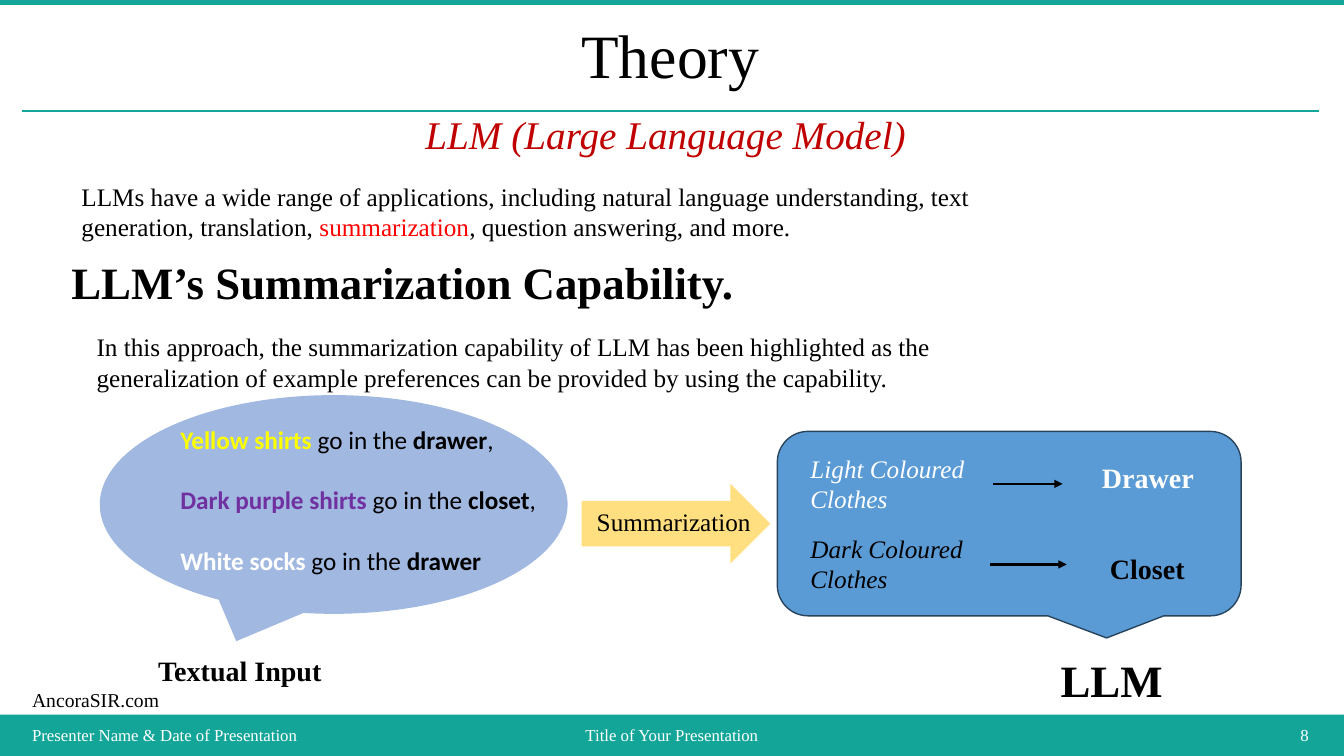
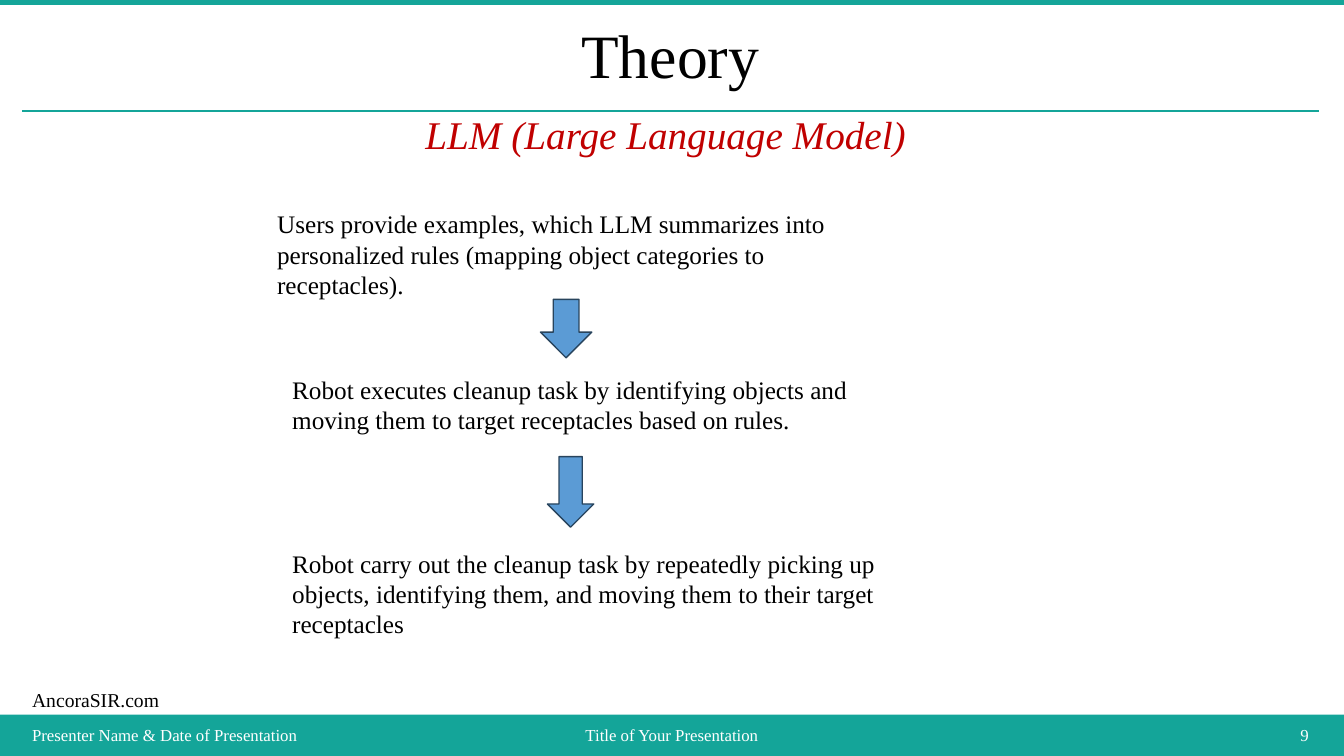
from lxml import etree
from pptx import Presentation
from pptx.dml.color import RGBColor
from pptx.enum import shapes, text
from pptx.oxml.ns import qn
from pptx.util import Inches, Pt

TEAL = RGBColor(0x14, 0xA5, 0x99)
WHITE = RGBColor(0xFF, 0xFF, 0xFF)
BLACK = RGBColor(0, 0, 0)
CRIMSON = RGBColor(0xC0, 0, 0)
RED = RGBColor(0xFF, 0, 0)
YELLOW = RGBColor(0xFF, 0xFF, 0)
PURPLE = RGBColor(0x70, 0x30, 0xA0)
BLUE = RGBColor(0x5B, 0x9B, 0xD5)
DARK_BLUE = RGBColor(0x28, 0x44, 0x5D)
INDIGO = RGBColor(0x44, 0x72, 0xC4)
GOLD = RGBColor(0xFF, 0xC0, 0)

SERIF = "Times New Roman"
SANS = "Calibri"
SHAPE = shapes.MSO_SHAPE
CENTER = text.PP_ALIGN.CENTER
RIGHT = text.PP_ALIGN.RIGHT
MIDDLE = text.MSO_ANCHOR.MIDDLE


class Deck:
    """The shared style and the slide being built."""

    def __init__(self):
        self.prs = Presentation()
        self.prs.slide_width = Inches(13.33)
        self.prs.slide_height = Inches(7.5)
        self.slide = None

    def start_slide(self, title, subtitle, number):
        self.slide = self.prs.slides.add_slide(self.prs.slide_layouts[6])
        background = self.slide.background.fill
        background.solid()
        background.fore_color.rgb = TEAL
        self.shape(SHAPE.RECTANGLE, (0, 0.05, 13.33, 7.04), WHITE)
        self.text((0.22, 6.78, 1.47, 0.34), "AncoraSIR.com", 14, wrap=False)
        self.line((0.22, 1.1), (13.08, 1.1), TEAL, 1)
        self.text((0.22, 0.08, 12.86, 1.01), title, 44, align=CENTER,
                  anchor=MIDDLE, line_spacing=0.9)
        self.text((0.22, 1.1, 12.86, 0.56), subtitle, 28, CRIMSON, italic=True,
                  align=CENTER, line_spacing=0.9)
        footers = (
            (0.22, 4.86, "Presenter Name & Date of Presentation", None),
            (5.08, 3.17, "Title of Your Presentation", CENTER),
            (8.25, 4.83, str(number), RIGHT),
        )
        for left, width, footer, align in footers:
            self.text((left, 7.09, width, 0.4), footer, 12, WHITE,
                      align=align, anchor=MIDDLE)

    def text(self, box, content, size=18, color=BLACK, font=SERIF, bold=False,
             italic=False, align=None, anchor=None, line_spacing=None, gap=0,
             wrap=True):
        """Add text: a string, or a list of paragraphs of (words, colour, bold) runs."""
        frame = self.slide.shapes.add_textbox(*map(Inches, box)).text_frame
        frame.word_wrap = wrap
        if anchor is not None:
            frame.vertical_anchor = anchor
        if isinstance(content, str):
            content = [[(content, color, bold)]]
        for index, runs in enumerate(content):
            paragraph = frame.add_paragraph() if index else frame.paragraphs[0]
            if index and gap:
                paragraph.space_before = Pt(gap)
            paragraph.alignment = align
            paragraph.line_spacing = line_spacing
            paragraph.font.name = font
            paragraph.font.size = Pt(size)
            paragraph.font.italic = italic
            for words, run_color, run_bold in runs:
                run = paragraph.add_run()
                run.text = words
                run.font.color.rgb = run_color
                run.font.bold = run_bold

    def shape(self, kind, box, fill, outline=None, opacity=100, adjustments=()):
        shape = self.slide.shapes.add_shape(kind, *map(Inches, box))
        shape.shadow.inherit = False
        for index, value in enumerate(adjustments):
            shape.adjustments[index] = value
        shape.fill.solid()
        shape.fill.fore_color.rgb = fill
        if opacity < 100:
            color = next(shape._element.spPr.iter(qn("a:srgbClr")))
            etree.SubElement(color, qn("a:alpha"), val=str(opacity * 1000))
        if outline is None:
            shape.line.fill.background()
        else:
            shape.line.color.rgb = outline
            shape.line.width = Pt(1)

    def line(self, start, end, color, width, arrow=False):
        line = self.slide.shapes.add_connector(
            shapes.MSO_CONNECTOR.STRAIGHT, *map(Inches, start + end))
        line.line.color.rgb = color
        line.line.width = Pt(width)
        properties = line._element.spPr
        if arrow:
            etree.SubElement(properties.find(qn("a:ln")), qn("a:tailEnd"),
                             type="triangle")
        etree.SubElement(properties, qn("a:effectLst"))


def summarization_slide(deck):
    deck.start_slide("Theory", "LLM (Large Language Model) ", 8)
    deck.text((0.71, 1.75, 9.15, 0.71), [[
        ("LLMs have a wide range of applications, including natural language "
         "understanding, text generation, translation, ", BLACK, False),
        ("summarization", RED, False),
        (", question answering, and more.", BLACK, False),
    ]])
    deck.text((0.61, 2.48, 7.8, 0.64), "LLM’s Summarization Capability.", 32, bold=True)
    deck.text((0.86, 3.24, 9.34, 0.71),
              "In this approach, the summarization capability of LLM has been "
              "highlighted as the generalization of example preferences can be "
              "provided by using the capability.")

    deck.shape(SHAPE.OVAL_CALLOUT, (0.99, 3.92, 4.64, 2.17), INDIGO, opacity=50)
    examples = (
        ("Yellow shirts ", YELLOW, "drawer", ","),
        ("Dark purple shirts ", PURPLE, "closet", ","),
        ("White socks ", WHITE, "drawer", ""),
    )
    preferences = []
    for item, color, place, ending in examples:
        runs = [(item, color, True), ("go in the ", BLACK, False), (place, BLACK, True)]
        if ending:
            runs.append((ending, BLACK, False))
        preferences.append(runs)
    deck.text((1.69, 4.16, 3.97, 1.62), preferences, font=SANS, gap=21.6)
    deck.text((1.47, 6.43, 3.33, 0.44), "Textual Input", 20, bold=True)

    deck.shape(SHAPE.RIGHT_ARROW, (5.77, 4.8, 1.87, 0.79), GOLD, opacity=50,
               adjustments=(0.57, 0.5))
    deck.text((5.82, 4.97, 1.78, 0.4), "Summarization")

    deck.shape(SHAPE.ROUNDED_RECTANGULAR_CALLOUT, (7.71, 4.28, 4.6, 1.83), BLUE,
               DARK_BLUE, adjustments=(0.21, 0.62))
    rules = (
        ("Light Coloured Clothes", (7.94, 4.45, 2.54, 0.71),
         "Drawer", (10.83, 4.52, 1.25, 0.44), WHITE, (9.85, 10.54, 4.8)),
        ("Dark Coloured Clothes", (7.94, 5.24, 2.04, 0.71),
         "Closet", (10.91, 5.42, 1.37, 0.44), BLACK, (9.82, 10.58, 5.6)),
    )
    for clothes, clothes_box, place, place_box, color, (left, right, y) in rules:
        deck.text(clothes_box, clothes, color=color, italic=True)
        deck.text(place_box, place, 20, color, bold=True)
        deck.line((left, y), (right, y), BLACK, 1.5, arrow=True)
    deck.text((10.42, 6.43, 1.55, 0.64), "LLM", 32, bold=True)


def cleanup_slide(deck):
    deck.start_slide("Theory", "LLM (Large Language Model) ", 9)
    steps = (
        ((2.65, 2.02, 6.31, 1.01),
         "Users provide examples, which LLM summarizes into personalized rules "
         "(mapping object categories to receptacles)."),
        ((2.8, 3.66, 6.24, 0.71),
         "Robot executes cleanup task by identifying objects and moving them to "
         "target receptacles based on rules."),
        ((2.8, 5.39, 6.57, 1.01),
         "Robot carry out the cleanup task by repeatedly picking up objects, "
         "identifying them, and moving them to their target receptacles"),
    )
    for box, step in steps:
        deck.text(box, step)
    for box in ((5.36, 2.97, 0.51, 0.58), (5.43, 4.53, 0.46, 0.7)):
        deck.shape(SHAPE.DOWN_ARROW, box, BLUE, DARK_BLUE)


def main():
    deck = Deck()
    summarization_slide(deck)
    cleanup_slide(deck)
    deck.prs.save("out.pptx")


if __name__ == "__main__":
    main()
